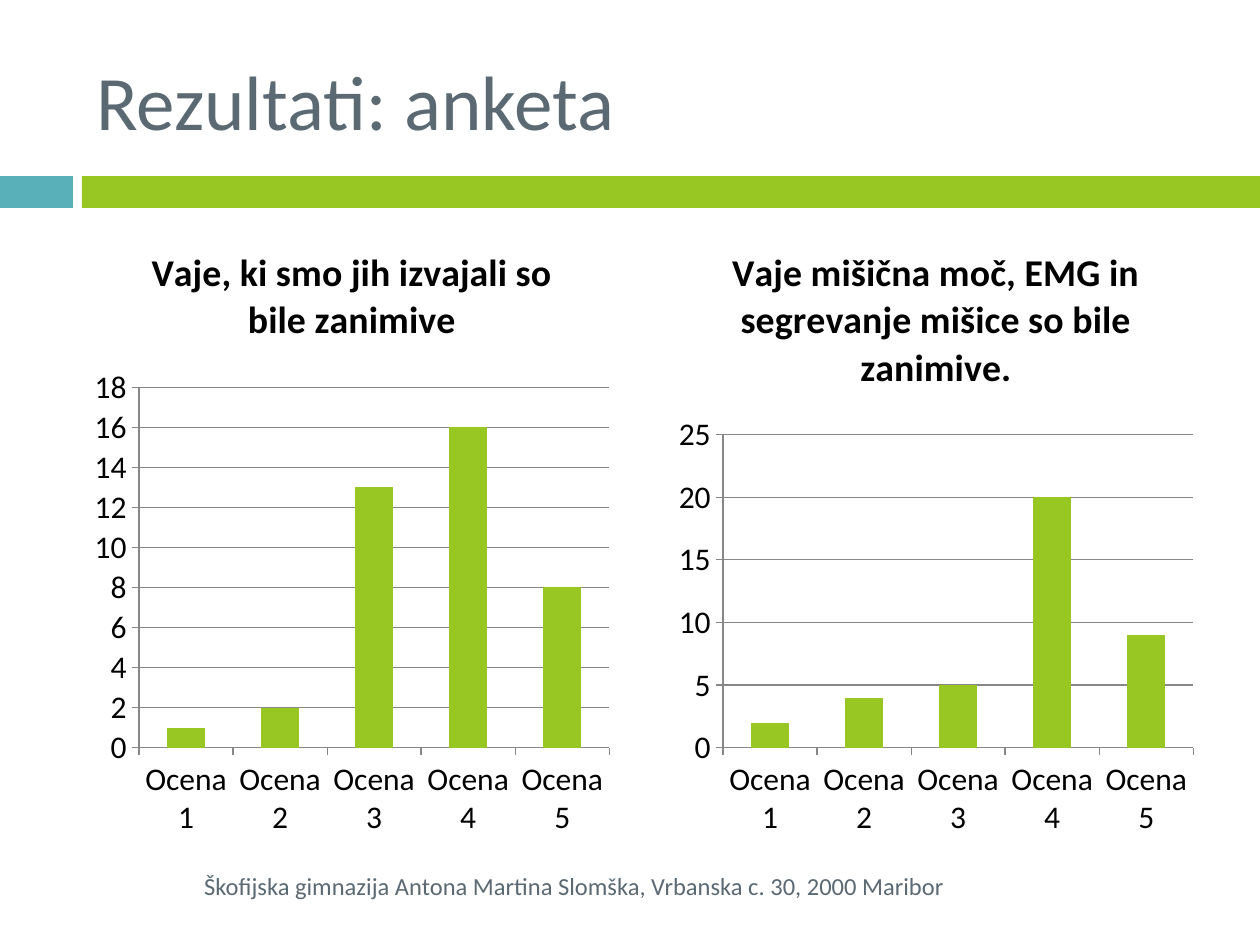
import pptx
import pptx.util
import pptx.chart.data
import pptx.dml.color
import pptx.enum.chart
import pptx.enum.shapes
import pptx.enum.text

RGB = pptx.dml.color.RGBColor
Pt = pptx.util.Pt
ALIGN = pptx.enum.text.PP_ALIGN

TEAL = RGB(0x59, 0xB0, 0xB9)
GREEN = RGB(0x98, 0xC7, 0x23)
SLATE = RGB(0x5B, 0x69, 0x73)
BLACK = RGB(0, 0, 0)
GRAY = RGB(0x87, 0x87, 0x87)
FACE = "Calibri"

GRADES = [f"Ocena {n}" for n in range(1, 6)]
POLLS = [
    ("Vaje, ki smo jih izvajali so bile zanimive", [1, 2, 13, 16, 8]),
    ("Vaje mišična moč, EMG in segrevanje mišice so bile zanimive.",
     [2, 4, 5, 20, 9]),
]


def px(*vals):
    """Turn pixels (126 to the inch) into EMU."""
    return [round(v * 914400 / 126) for v in vals]


def style(font, size, color, bold=False):
    font.name = FACE
    font.size = Pt(size)
    font.bold = bold
    font.color.rgb = color


def add_bar(slide, box, color):
    bar = slide.shapes.add_shape(
        pptx.enum.shapes.MSO_SHAPE.RECTANGLE, *px(*box))
    bar.shadow.inherit = False
    bar.fill.solid()
    bar.fill.fore_color.rgb = color
    bar.line.fill.background()


def add_text(slide, box, text, size, align):
    frame = slide.shapes.add_textbox(*px(*box)).text_frame
    frame.word_wrap = True
    frame.vertical_anchor = pptx.enum.text.MSO_ANCHOR.MIDDLE
    par = frame.paragraphs[0]
    par.text = text
    par.alignment = align
    style(par.font, size, SLATE)


def add_poll(slide, box, title, votes):
    data = pptx.chart.data.CategoryChartData()
    data.categories = GRADES
    data.add_series(title, votes)
    chart = slide.shapes.add_chart(
        pptx.enum.chart.XL_CHART_TYPE.COLUMN_CLUSTERED,
        *px(*box), data).chart
    chart.has_legend = False
    style(chart.font, 18, BLACK)

    # Title
    chart.has_title = True
    chart.chart_title.include_in_layout = False
    par = chart.chart_title.text_frame.paragraphs[0]
    par.text = title
    style(par.font, 21.6, BLACK, True)

    # Columns
    plot = chart.plots[0]
    plot.gap_width = 150
    plot.vary_by_categories = False
    fill = plot.series[0].format.fill
    fill.solid()
    fill.fore_color.rgb = GREEN

    # Axes
    grid = chart.value_axis.major_gridlines
    for part in (chart.category_axis, chart.value_axis, grid):
        part.format.line.color.rgb = GRAY
        part.format.line.width = Pt(0.75)


def main():
    deck = pptx.Presentation()
    deck.slide_width, deck.slide_height = px(1260, 945)
    slide = deck.slides.add_slide(deck.slide_layouts[6])

    # Header
    add_bar(slide, (0, 176, 73, 32), TEAL)
    add_bar(slide, (82, 176, 1178, 32), GREEN)
    add_text(slide, (84, 32, 1124, 136), "Rezultati: anketa", 44, ALIGN.LEFT)

    # Survey charts
    for i, (title, votes) in enumerate(POLLS):
        add_poll(slide, (84 + 584 * i, 219, 536, 630), title, votes)

    # Footer
    add_text(slide, (84, 861, 873, 50),
             "Škofijska gimnazija Antona Martina Slomška, "
             "Vrbanska c. 30, 2000 Maribor", 14, ALIGN.RIGHT)

    deck.save("out.pptx")


if __name__ == "__main__":
    main()
